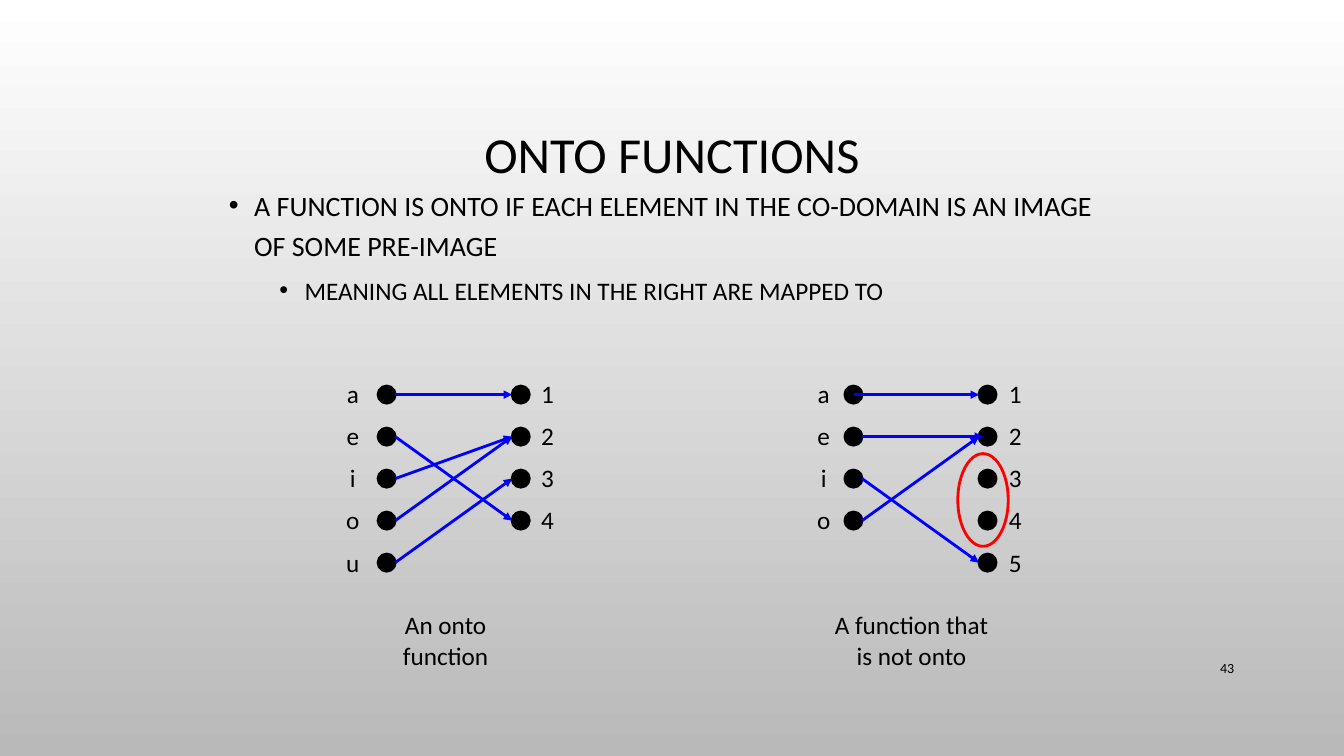
from lxml import etree
from pptx import Presentation
from pptx.dml.color import RGBColor
from pptx.enum.shapes import MSO_CONNECTOR, MSO_SHAPE
from pptx.enum.text import MSO_ANCHOR, MSO_AUTO_SIZE, PP_ALIGN
from pptx.oxml.ns import qn
from pptx.util import Inches, Pt

BLACK = RGBColor(0, 0, 0)
WHITE = RGBColor(255, 255, 255)
GRAY = RGBColor(0xB9, 0xB9, 0xB9)
BLUE = RGBColor(0, 0, 255)
RED = RGBColor(255, 0, 0)
FONT = "Calibri"

TITLE = "ONTO FUNCTIONS"
# text, level, size, indent, space before
BULLETS = [
    ("A FUNCTION IS ONTO IF EACH ELEMENT IN THE CO-DOMAIN IS AN IMAGE OF SOME PRE-IMAGE",
     0, 20, 0.25, 0),
    ("MEANING ALL ELEMENTS IN THE RIGHT ARE MAPPED TO", 1, 18, 0.75, 5),
]
PAGE_NUMBER = "43"

# Arrows: domain row, co-domain row, shift of the start, shift of the end
MAPPINGS = [
    {"domain": "aeiou", "codomain": "1234", "dots": (3.75, 5.08), "labels": (3.33, 5.26),
     "arrows": [(0, 0, 0, 0), (1, 3, 0, 0), (2, 1, 0, 0), (3, 1, 0, 0), (4, 2, 0, 0)],
     "caption": "An onto function", "caption_box": (3.52, 6, 1.8, 0.7)},
    {"domain": "aeio", "codomain": "12345", "dots": (8.38, 9.71), "labels": (8, 9.9),
     "arrows": [(0, 0, -0.08, 0), (1, 1, 0, 0.04), (2, 4, 0, 0), (3, 1, 0, 0)],
     "caption": "A function that is not onto", "caption_box": (8.08, 6, 1.92, 0.7)},
]
DOT = 0.17
FIRST_DOT_TOP = 3.83
ROW_PITCH = 5 / 12
LABEL_TOP, LABEL_WIDTH, LABEL_HEIGHT = 3.58, 0.34, 2.2
UNMAPPED_RING = (9.5, 4.5, 0.5, 0.92)


def inches(values):
    return [Inches(value) for value in values]


def place(shape, box):
    shape.left, shape.top, shape.width, shape.height = inches(box)


def style(paragraph, size, align=PP_ALIGN.CENTER, line_spacing=1.0):
    paragraph.alignment = align
    paragraph.line_spacing = line_spacing
    for run in paragraph.runs:
        run.font.name = FONT
        run.font.size = Pt(size)
        run.font.color.rgb = BLACK


def add_text(shapes, lines, box, size=18, align=PP_ALIGN.CENTER, line_spacing=1.0, wrap=True):
    text_box = shapes.add_textbox(*inches(box))
    frame = text_box.text_frame
    frame.word_wrap = wrap
    frame.text = "\n".join(lines)
    for paragraph in frame.paragraphs:
        style(paragraph, size, align, line_spacing)
    return text_box


def add_ellipse(shapes, box, line_color, fill_color=None):
    ellipse = shapes.add_shape(MSO_SHAPE.OVAL, *inches(box))
    ellipse.shadow.inherit = False
    if fill_color is None:
        ellipse.fill.background()
    else:
        ellipse.fill.solid()
        ellipse.fill.fore_color.rgb = fill_color
    ellipse.line.color.rgb = line_color
    ellipse.line.width = Pt(2)


def add_arrow(shapes, start, end):
    arrow = shapes.add_connector(MSO_CONNECTOR.STRAIGHT, *inches(start + end))
    arrow.line.color.rgb = BLUE
    arrow.line.width = Pt(2)
    etree.SubElement(arrow.line._get_or_add_ln(), qn("a:tailEnd"), type="triangle")
    etree.SubElement(arrow._element.spPr, qn("a:effectLst"))


def add_bullet(paragraph, indent):
    properties = paragraph._p.get_or_add_pPr()
    properties.set("marL", str(Inches(indent)))
    properties.set("indent", str(Inches(-0.25)))
    color = etree.SubElement(properties, qn("a:buClr"))
    etree.SubElement(color, qn("a:srgbClr"), val=str(BLACK))
    etree.SubElement(properties, qn("a:buFont"), typeface="Arial")
    etree.SubElement(properties, qn("a:buChar"), char="•")


def row_top(row):
    return FIRST_DOT_TOP + row * ROW_PITCH


def add_mapping(slide, mapping):
    shapes = slide.shapes.add_group_shape().shapes
    columns = zip((mapping["domain"], mapping["codomain"]), mapping["dots"], mapping["labels"])
    for elements, dot_left, label_left in columns:
        for row in range(len(elements)):
            add_ellipse(shapes, (dot_left, row_top(row), DOT, DOT), BLACK, BLACK)
        add_text(shapes, elements, (label_left, LABEL_TOP, LABEL_WIDTH, LABEL_HEIGHT),
                 line_spacing=1.4, wrap=False)
    domain_left, codomain_left = mapping["dots"]
    for source, target, start_shift, end_shift in mapping["arrows"]:
        add_arrow(shapes,
                  (domain_left + DOT + start_shift, row_top(source) + DOT / 2),
                  (codomain_left + end_shift, row_top(target) + DOT / 2))
    add_text(shapes, [mapping["caption"]], mapping["caption_box"])


def main():
    presentation = Presentation()
    presentation.slide_width, presentation.slide_height = Inches(13.33), Inches(7.5)
    slide = presentation.slides.add_slide(presentation.slide_layouts[1])

    background = slide.background.fill
    background.gradient()
    background.gradient_angle = 270
    for stop, color, position in zip(background.gradient_stops, (WHITE, GRAY), (0, 1)):
        stop.color.rgb = color
        stop.position = position

    title = slide.shapes.title
    place(title, (1, 0.68, 11.33, 1.75))
    title.text_frame.text = TITLE
    title.text_frame.vertical_anchor = MSO_ANCHOR.MIDDLE
    style(title.text_frame.paragraphs[0], 36, line_spacing=0.9)

    body = slide.placeholders[1]
    place(body, (2.17, 1.75, 9, 4.95))
    frame = body.text_frame
    frame.auto_size = MSO_AUTO_SIZE.NONE
    frame.text = "\n".join(bullet[0] for bullet in BULLETS)
    for paragraph, (_, level, size, indent, space) in zip(frame.paragraphs, BULLETS):
        add_bullet(paragraph, indent)
        paragraph.level = level
        paragraph.space_before = Pt(space)
        style(paragraph, size, PP_ALIGN.LEFT, 1.2)

    for mapping in MAPPINGS:
        add_mapping(slide, mapping)
    add_ellipse(slide.shapes, UNMAPPED_RING, RED)

    number = add_text(slide.shapes, [PAGE_NUMBER], (11.5, 6.43, 0.84, 0.4), 10, PP_ALIGN.RIGHT)
    number.text_frame.vertical_anchor = MSO_ANCHOR.MIDDLE
    presentation.save("out.pptx")


if __name__ == "__main__":
    main()
